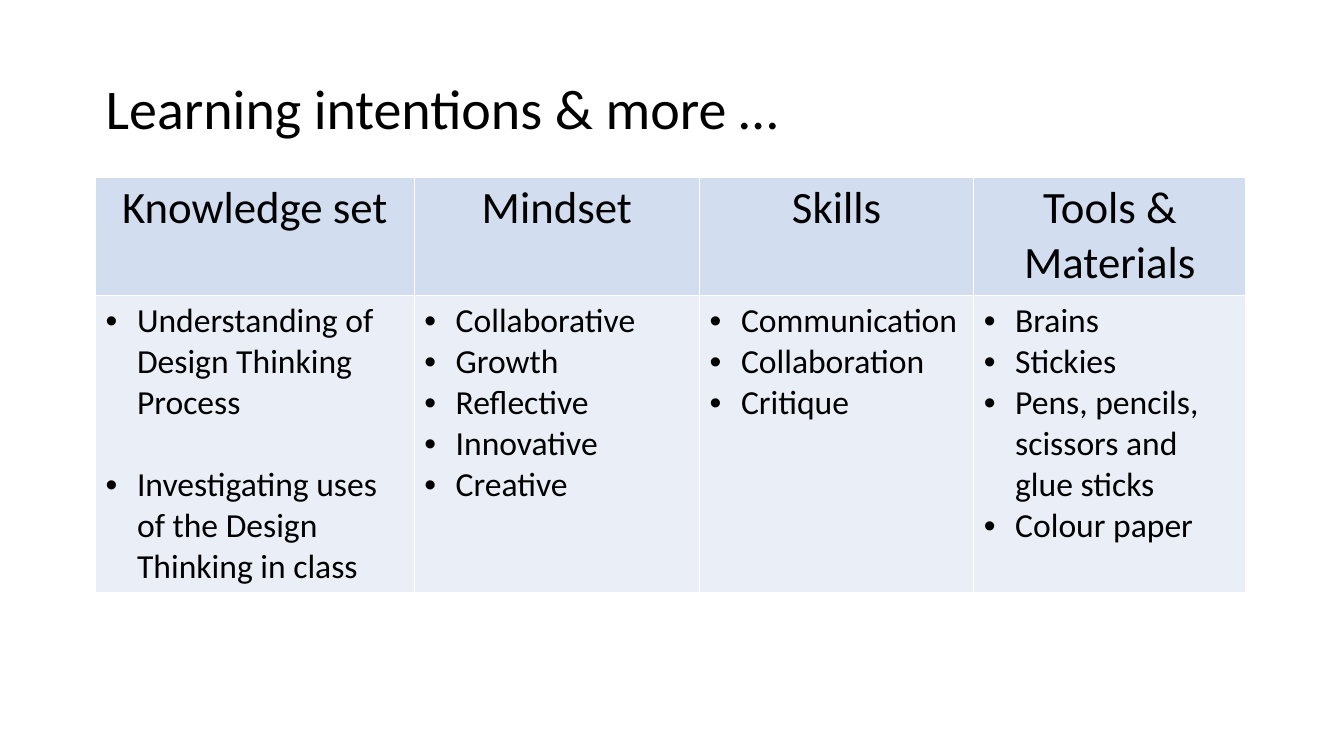
import pptx
import pptx.util
import pptx.dml.color
import pptx.enum.text
import pptx.oxml.ns
import lxml.etree

TITLE = "Learning intentions & more …"
COLUMNS = [
    ("Knowledge set", 8.03, ["Understanding of Design Thinking Process",
                             "Investigating uses of the Design Thinking in class"]),
    ("Mindset", 7.19, ["Collaborative", "Growth", "Reflective", "Innovative", "Creative"]),
    ("Skills", 6.91, ["Communication", "Collaboration", "Critique"]),
    ("Tools & Materials", 6.86, ["Brains", "Stickies", "Pens, pencils, scissors and glue sticks",
                                 "Colour paper"]),
]
ROW_HEIGHTS = [2.63, 2.97, 7.47]
LEFT, TOP = 2.41, 1.8
INDENT = 0.79
ITEM_GAPS = {"Knowledge set": 29.3}
FONT = "Calibri"
COLORS = {"text": "000000", "border": "FFFFFF", "header": "D2DEEF", "body": "EAEFF7"}

Cm = pptx.util.Cm
Pt = pptx.util.Pt


def rgb(name):
    return pptx.dml.color.RGBColor.from_string(COLORS[name])


def add_element(parent, tag, **attributes):
    element = lxml.etree.SubElement(parent, pptx.oxml.ns.qn(tag))
    for name, value in attributes.items():
        element.set(name, str(value))
    return element


def style_cell(cell, fill=None, bottom=1):
    properties = cell._tc.get_or_add_tcPr()
    for side, width in (("L", 1), ("R", 1), ("T", 1), ("B", bottom)):
        line = add_element(properties, f"a:ln{side}", w=int(Pt(width)))
        solid = add_element(line, "a:solidFill")
        add_element(solid, "a:srgbClr", val=COLORS["border"])
    if fill:
        cell.fill.solid()
        cell.fill.fore_color.rgb = rgb(fill)
    else:
        cell.fill.background()


def write(paragraph, text, size):
    run = paragraph.add_run()
    run.text = text
    run.font.name = FONT
    run.font.size = Pt(size)
    run.font.bold = False
    run.font.color.rgb = rgb("text")


def write_bullets(cell, items, gap):
    for index, item in enumerate(items):
        frame = cell.text_frame
        paragraph = frame.add_paragraph() if index else frame.paragraphs[0]
        if index and gap:
            paragraph.space_before = Pt(gap)
        properties = paragraph._p.get_or_add_pPr()
        properties.set("marL", str(int(Cm(INDENT))))
        properties.set("indent", str(-int(Cm(INDENT))))
        add_element(properties, "a:buFont", typeface="Arial")
        add_element(properties, "a:buChar", char="•")
        write(paragraph, item, 24)


def main():
    presentation = pptx.Presentation()
    presentation.slide_width = Cm(33.87)
    presentation.slide_height = Cm(19.05)
    slide = presentation.slides.add_slide(presentation.slide_layouts[6])

    total_width = sum(width for _, width, _ in COLUMNS)
    table = slide.shapes.add_table(len(ROW_HEIGHTS), len(COLUMNS), Cm(LEFT), Cm(TOP),
                                   Cm(total_width), Cm(sum(ROW_HEIGHTS))).table
    table.first_row = False
    table.horz_banding = False
    for row, height in zip(table.rows, ROW_HEIGHTS):
        row.height = Cm(height)

    for index, (heading, width, items) in enumerate(COLUMNS):
        table.columns[index].width = Cm(width)
        title_cell, header_cell, body_cell = (table.cell(row, index) for row in range(3))
        style_cell(title_cell, bottom=3)
        style_cell(header_cell, "header")
        style_cell(body_cell, "body")
        header = header_cell.text_frame.paragraphs[0]
        header.alignment = pptx.enum.text.PP_ALIGN.CENTER
        write(header, heading, 32)
        write_bullets(body_cell, items, ITEM_GAPS.get(heading))

    title_cell = table.cell(0, 0)
    title_cell.merge(table.cell(0, len(COLUMNS) - 1))
    write(title_cell.text_frame.paragraphs[0], TITLE, 40)

    presentation.save("out.pptx")


if __name__ == "__main__":
    main()
